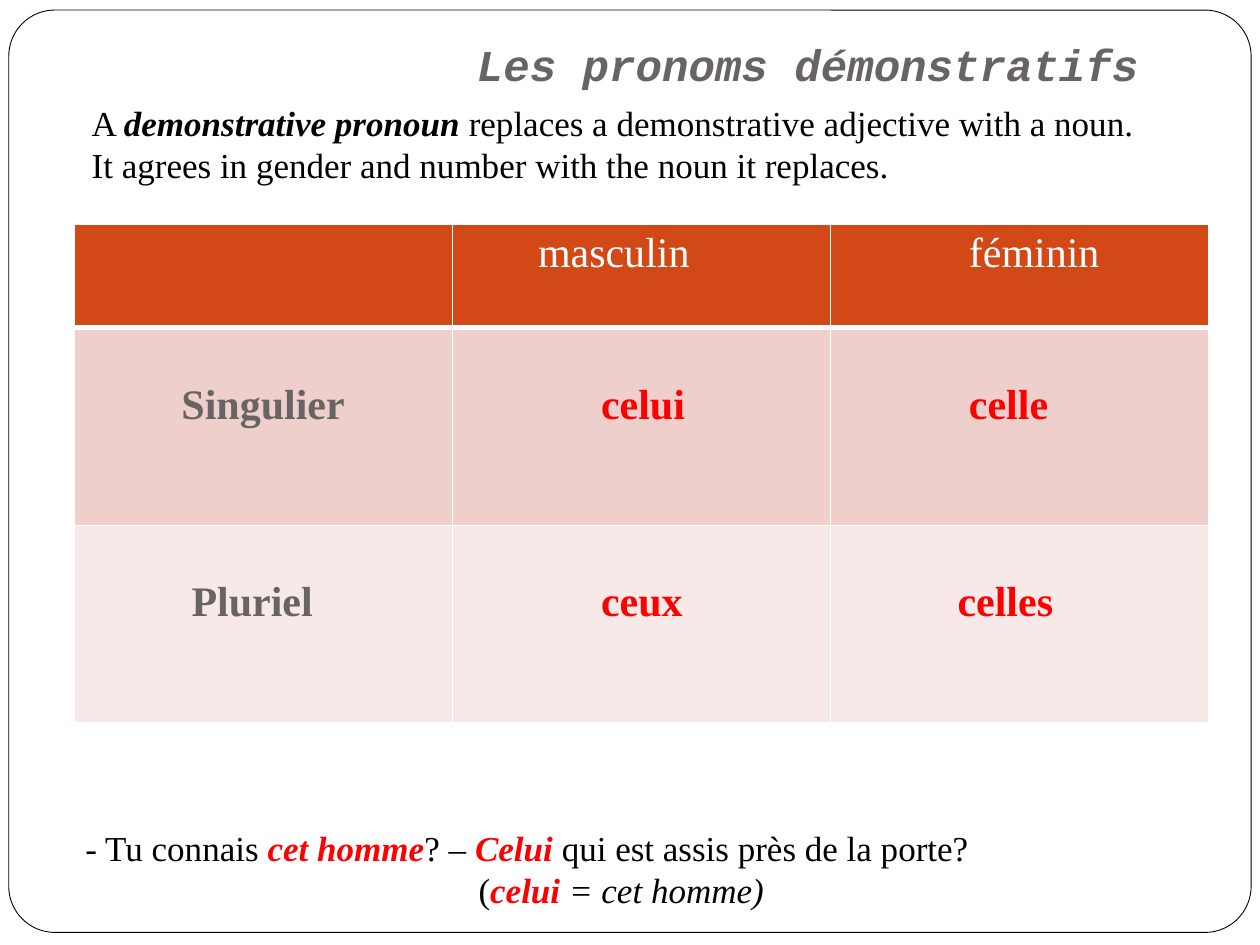
from dataclasses import dataclass

from lxml import etree
from pptx import Presentation
from pptx.dml.color import RGBColor
from pptx.enum.shapes import MSO_SHAPE
from pptx.enum.text import MSO_ANCHOR, MSO_AUTO_SIZE, PP_ALIGN
from pptx.oxml.ns import qn
from pptx.util import Inches, Pt

ROUNDED = MSO_SHAPE.ROUNDED_RECTANGLE
TOP = MSO_ANCHOR.TOP
NO_AUTOFIT = MSO_AUTO_SIZE.NONE
CENTER = PP_ALIGN.CENTER
TITLE_ONLY = 5
SERIF = "Times New Roman"
MONO = "Courier New"
COLORS = {
    "white": "FFFFFF", "black": "000000", "gray": "696464", "red": "FF0000",
    "header": "D34817", "singular": "EFCFCC", "plural": "F7E9E8",
}


@dataclass
class Span:
    text: str
    color: str = "black"
    bold: bool = False
    italic: bool = False


@dataclass
class Line:
    spans: list[Span]
    indent: float = 0


@dataclass
class Entry:
    text: str
    color: str
    inset: float


@dataclass
class Row:
    fill: str
    height: float
    top_inset: float
    bold: bool
    bottom_border: float
    entries: list[Entry]


def rgb(name: str) -> RGBColor:
    return RGBColor.from_string(COLORS[name])


def add_frame(slide) -> None:
    frame = slide.shapes.add_shape(
        ROUNDED, Inches(0.07), Inches(0.08), Inches(9.86), Inches(7.32))
    frame.adjustments[0] = 0.05
    frame.shadow.inherit = False
    frame.fill.solid()
    frame.fill.fore_color.rgb = rgb("white")
    frame.line.color.rgb = rgb("black")
    frame.line.width = Pt(0.5)
    # Behind the title
    slide.shapes.title._element.addprevious(frame._element)


def format_title(title, text: str) -> None:
    title.left, title.top = Inches(1), Inches(0.3)
    title.width, title.height = Inches(8.5), Inches(0.85)
    body = title.text_frame
    body.text = text
    body.auto_size = NO_AUTOFIT
    body.vertical_anchor = TOP
    body.margin_left, body.margin_top = Inches(2.42), 0
    heading = body.paragraphs[0]
    heading.alignment = CENTER
    font = heading.font
    font.name, font.size = MONO, Pt(25.2)
    font.bold = font.italic = True
    font.color.rgb = rgb("gray")


def add_text(slide, left: float, top: float, width: float,
             lines: list[Line]) -> None:
    box = slide.shapes.add_textbox(
        Inches(left), Inches(top), Inches(width), Inches(0.77))
    body = box.text_frame
    body.word_wrap = True
    for i, line in enumerate(lines):
        paragraph = body.add_paragraph() if i else body.paragraphs[0]
        paragraph.font.name, paragraph.font.size = SERIF, Pt(20)
        if line.indent:
            paragraph._p.get_or_add_pPr().set("marL", str(Inches(line.indent)))
        for span in line.spans:
            run = paragraph.add_run()
            run.text = span.text
            run.font.bold, run.font.italic = span.bold, span.italic
            run.font.color.rgb = rgb(span.color)


def set_borders(cell, bottom: float) -> None:
    properties = cell._tc.get_or_add_tcPr()
    widths = {"a:lnL": 1, "a:lnR": 1, "a:lnT": 1, "a:lnB": bottom}
    # Borders come before the fill
    for position, (side, width) in enumerate(widths.items()):
        border = etree.Element(qn(side), w=str(Pt(width)))
        solid = etree.SubElement(border, qn("a:solidFill"))
        etree.SubElement(solid, qn("a:srgbClr"), val=COLORS["white"])
        properties.insert(position, border)


def add_pronoun_table(slide, rows: list[Row]) -> None:
    columns = len(rows[0].entries)
    table = slide.shapes.add_table(
        len(rows), columns, Inches(0.59), Inches(1.78), Inches(3 * columns),
        Inches(sum(row.height for row in rows))).table
    for r, row in enumerate(rows):
        table.rows[r].height = Inches(row.height)
        for c, entry in enumerate(row.entries):
            cell = table.cell(r, c)
            cell.fill.solid()
            cell.fill.fore_color.rgb = rgb(row.fill)
            set_borders(cell, row.bottom_border)
            cell.margin_left = Inches(entry.inset)
            cell.margin_top = Inches(row.top_inset)
            cell.text = entry.text
            font = cell.text_frame.paragraphs[0].font
            font.name, font.size, font.bold = SERIF, Pt(24), row.bold
            font.color.rgb = rgb(entry.color)


def main() -> None:
    deck = Presentation()
    deck.slide_width, deck.slide_height = Inches(10), Inches(7.5)
    slide = deck.slides.add_slide(deck.slide_layouts[TITLE_ONLY])

    # Frame and title
    add_frame(slide)
    format_title(slide.shapes.title, "Les pronoms démonstratifs")

    # Pronouns by gender and number
    add_pronoun_table(slide, [
        Row("header", 0.82, 0.05, False, 3, [
            Entry("", "white", 0.1),
            Entry("masculin", "white", 0.68),
            Entry("féminin", "white", 1.1)]),
        Row("singular", 1.57, 0.43, True, 1, [
            Entry("Singulier", "gray", 0.85),
            Entry("celui", "red", 1.18),
            Entry("celle", "red", 1.1)]),
        Row("plural", 1.57, 0.43, True, 1, [
            Entry("Pluriel", "gray", 0.93),
            Entry("ceux", "red", 1.18),
            Entry("celles", "red", 1.01)]),
    ])

    # Example
    add_text(slide, 0.58, 6.51, 9.14, [
        Line([Span("- Tu connais "),
              Span("cet homme", "red", True, True),
              Span("? – "),
              Span("Celui ", "red", True, True),
              Span("qui est assis près de la porte?")]),
        Line([Span("("),
              Span("celui ", "red", True, True),
              Span("= cet homme)", italic=True)], indent=3.12),
    ])

    # Definition
    add_text(slide, 0.63, 0.76, 9.37, [
        Line([Span("A "),
              Span("demonstrative pronoun ", bold=True, italic=True),
              Span("replaces a demonstrative adjective with a noun.")]),
        Line([Span("It agrees in gender and number with the noun it replaces.")]),
    ])

    deck.save("out.pptx")


if __name__ == "__main__":
    main()
